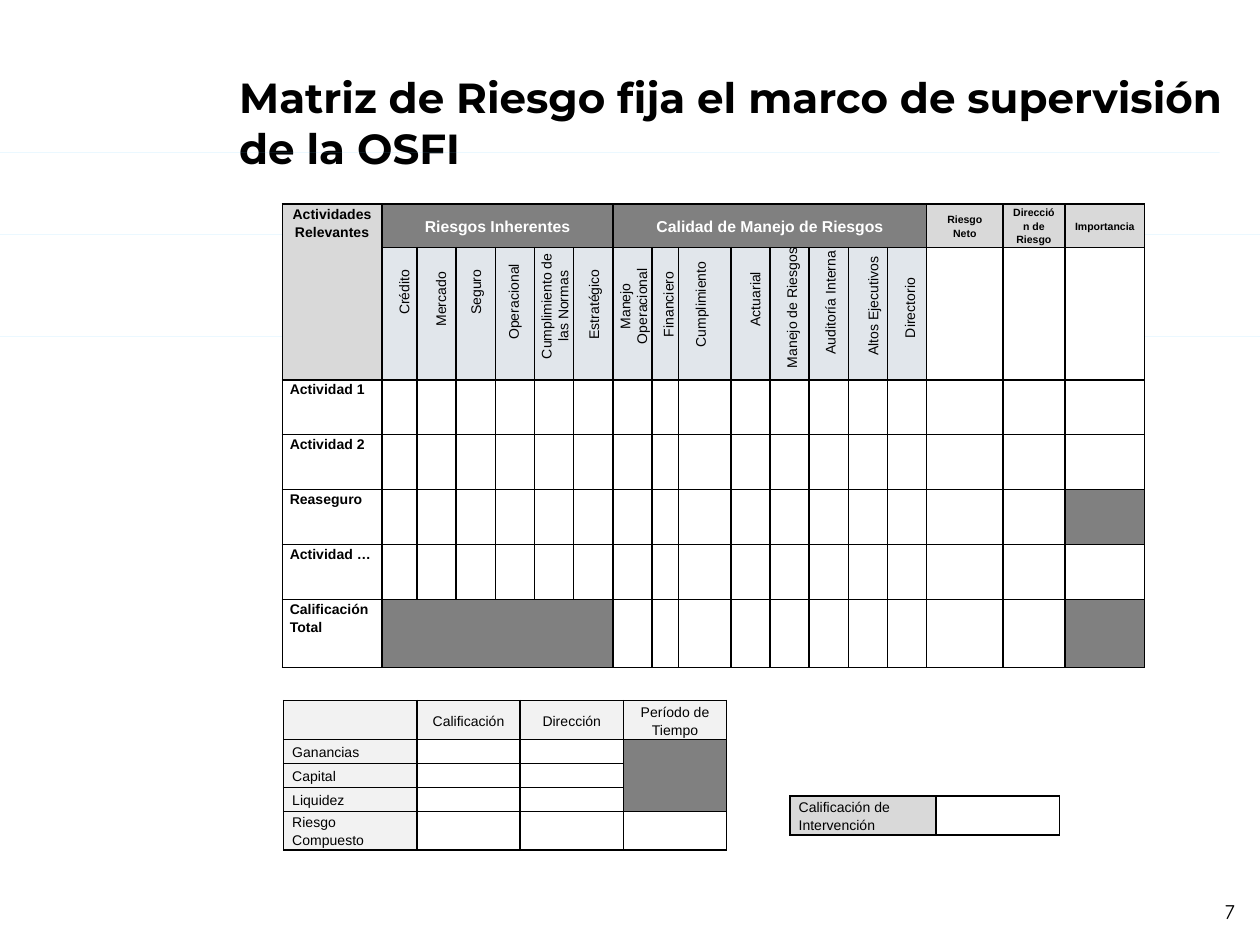
from dataclasses import dataclass

from lxml.etree import SubElement
from pptx import Presentation
from pptx.dml.color import RGBColor
from pptx.enum.shapes import MSO_SHAPE
from pptx.enum.text import MSO_ANCHOR, PP_ALIGN
from pptx.oxml.ns import qn
from pptx.util import Pt


@dataclass(frozen=True)
class Theme:
    black: str = "000000"
    white: str = "FFFFFF"
    dark: str = "808080"
    gray: str = "D9D9D9"
    pale: str = "F2F2F2"
    mist: str = "E1E6EB"
    sky: str = "66CCFF"
    title: int = 24
    number: int = 12
    band: int = 9
    body: int = 8
    small: int = 6
    heading_font: str = "Montserrat"
    number_font: str = "Comic Neue"
    body_font: str = "Arial"


theme = Theme()


def add_run(p, text, size=theme.body, bold=False, color=theme.black, font=theme.body_font):
    r = p.add_run()
    r.text = text
    r.font.size = Pt(size)
    r.font.bold = bold
    r.font.name = font
    r.font.color.rgb = RGBColor.from_string(color)


def add_grid(left, top, widths, heights, inset):
    """Add a white table with thin black borders and return it."""
    frame = s.shapes.add_table(len(heights), len(widths), Pt(left), Pt(top),
                               Pt(sum(widths)), Pt(sum(heights)))
    table = frame.table
    table.first_row = table.horz_banding = False
    for column, width in zip(table.columns, widths):
        column.width = Pt(width)
    for row, height in zip(table.rows, heights):
        row.height = Pt(height)
    for cell in table.iter_cells():
        cell.margin_left = cell.margin_right = Pt(inset)
        cell.margin_top = cell.margin_bottom = 0
        cell.vertical_anchor = MSO_ANCHOR.MIDDLE
        p = cell.text_frame.paragraphs[0]
        p.line_spacing = 1.15
        SubElement(p._p, qn("a:endParaRPr")).set("sz", str(theme.body * 100))
        tcPr = cell._tc.get_or_add_tcPr()
        for side in ("a:lnL", "a:lnR", "a:lnT", "a:lnB"):
            ln = SubElement(tcPr, qn(side), w=str(Pt(1)))
            SubElement(SubElement(ln, qn("a:solidFill")), qn("a:srgbClr"), val=theme.black)
        cell.fill.solid()
        cell.fill.fore_color.rgb = RGBColor.from_string(theme.white)
    return table


prs = Presentation()
prs.slide_width, prs.slide_height = Pt(720), Pt(540)
s = prs.slides.add_slide(prs.slide_layouts[6])

# Page number and title
tf = s.shapes.add_textbox(Pt(684), Pt(506), Pt(21.6), Pt(21.6)).text_frame
tf.margin_left = tf.margin_right = tf.margin_top = tf.margin_bottom = 0
tf.vertical_anchor = MSO_ANCHOR.BOTTOM
p = tf.paragraphs[0]
p.alignment = PP_ALIGN.RIGHT
add_run(p, "7", theme.number, font=theme.number_font)

tf = s.shapes.add_textbox(Pt(129.6), Pt(37.4), Pt(586.8), Pt(65.5)).text_frame
tf.word_wrap = True
add_run(tf.paragraphs[0], "Matriz de Riesgo fija el marco de supervisión de la OSFI",
        theme.title, True, font=theme.heading_font)

# Background rules
for left, top in ((-23, 87.1), (0, 133.9), (0, 192.2)):
    sp = s.shapes.add_shape(MSO_SHAPE.RECTANGLE, Pt(left), Pt(top), Pt(720), Pt(0))
    sp.shadow.inherit = False
    sp.fill.solid()
    sp.fill.fore_color.rgb = RGBColor.from_string(theme.sky)
    sp.line.fill.background()

# Risk matrix
matrix = add_grid(161.3, 116.6,
                  [57, 20] + [22.4] * 6 + [15, 30] + [22.4] * 5 + [43.5, 35.5, 45.5],
                  [25, 75.5] + [31.4] * 4 + [39], 4.3)
for first, last in (((0, 0), (1, 0)), ((0, 1), (0, 6)), ((0, 7), (0, 14)), ((6, 1), (6, 6))):
    matrix.cell(*first).merge(matrix.cell(*last))

matrix_headers = (
    (0, "Actividades Relevantes", theme.body, theme.black, theme.gray),
    (1, "Riesgos Inherentes", theme.band, theme.white, theme.dark),
    (7, "Calidad de Manejo de Riesgos", theme.band, theme.white, theme.dark),
    (15, "Riesgo Neto", theme.small, theme.black, theme.gray),
    (16, "Dirección de Riesgo", theme.small, theme.black, theme.gray),
    (17, "Importancia", theme.small, theme.black, theme.gray),
)
for col, text, size, color, fill in matrix_headers:
    cell = matrix.cell(0, col)
    cell.fill.fore_color.rgb = RGBColor.from_string(fill)
    p = cell.text_frame.paragraphs[0]
    p.alignment = PP_ALIGN.CENTER
    add_run(p, text, size, True, color)
matrix.cell(0, 0).vertical_anchor = MSO_ANCHOR.TOP

activities = ("Actividad 1", "Actividad 2", "Reaseguro", "Actividad …", "Calificación Total")
for row, text in enumerate(activities, 2):
    cell = matrix.cell(row, 0)
    cell.vertical_anchor = MSO_ANCHOR.TOP
    add_run(cell.text_frame.paragraphs[0], text, bold=True)
for col in range(1, 15):
    matrix.cell(1, col).fill.fore_color.rgb = RGBColor.from_string(theme.mist)
for row, col in ((4, 17), (6, 1), (6, 17)):
    matrix.cell(row, col).fill.fore_color.rgb = RGBColor.from_string(theme.dark)

# Vertical column labels: centre x, centre y, length, lines
column_labels = (
    (231, 167, 43, ["Crédito"]),
    (252, 171, 46, ["Mercado"]),
    (272, 167, 45, ["Seguro"]),
    (293.5, 172.5, 63, ["Operacional"]),
    (317, 175, 76, ["Cumplimiento de", "las Normas"]),
    (339.5, 174, 55, ["Estratégico"]),
    (362, 175, 58, ["Manejo", "Operacional"]),
    (382, 174, 54, ["Financiero"]),
    (400.5, 174, 64, ["Cumplimiento"]),
    (431.5, 171, 46, ["Actuarial"]),
    (452.5, 176, 84, ["Manejo de Riesgos"]),
    (474.5, 173, 75, ["Auditoría Interna"]),
    (499, 175, 72, ["Altos Ejecutivos"]),
    (520, 176, 49, ["Directorio"]),
)
for x, y, length, lines in column_labels:
    depth = 7.7 + 9.5 * len(lines)
    sp = s.shapes.add_textbox(Pt(x - length / 2), Pt(y - depth / 2), Pt(length), Pt(depth))
    sp.rotation = 270
    tf = sp.text_frame
    tf.word_wrap = False
    for i, line in enumerate(lines):
        p = tf.add_paragraph() if i else tf.paragraphs[0]
        p.alignment = PP_ALIGN.CENTER
        add_run(p, line)

# Summary ratings
summary = add_grid(162, 400.3, [76.3, 59, 59, 59], [22.2, 13.7, 13.7, 13.7, 22], 5)
summary.cell(1, 3).merge(summary.cell(3, 3))
summary.cell(1, 3).fill.fore_color.rgb = RGBColor.from_string(theme.dark)
for col, text in enumerate(("Calificación", "Dirección", "Período de Tiempo"), 1):
    p = summary.cell(0, col).text_frame.paragraphs[0]
    p.alignment = PP_ALIGN.CENTER
    add_run(p, text)
for row, text in enumerate(("Ganancias", "Capital", "Liquidez", "Riesgo Compuesto"), 1):
    add_run(summary.cell(row, 0).text_frame.paragraphs[0], text)
for row, col in [(0, col) for col in range(4)] + [(row, 0) for row in range(1, 5)]:
    summary.cell(row, col).fill.fore_color.rgb = RGBColor.from_string(theme.pale)

# Intervention rating
intervention = add_grid(451.4, 455, [83.5, 70.5], [22], 5)
cell = intervention.cell(0, 0)
cell.fill.fore_color.rgb = RGBColor.from_string(theme.gray)
add_run(cell.text_frame.paragraphs[0], "Calificación de Intervención")

prs.save("out.pptx")
